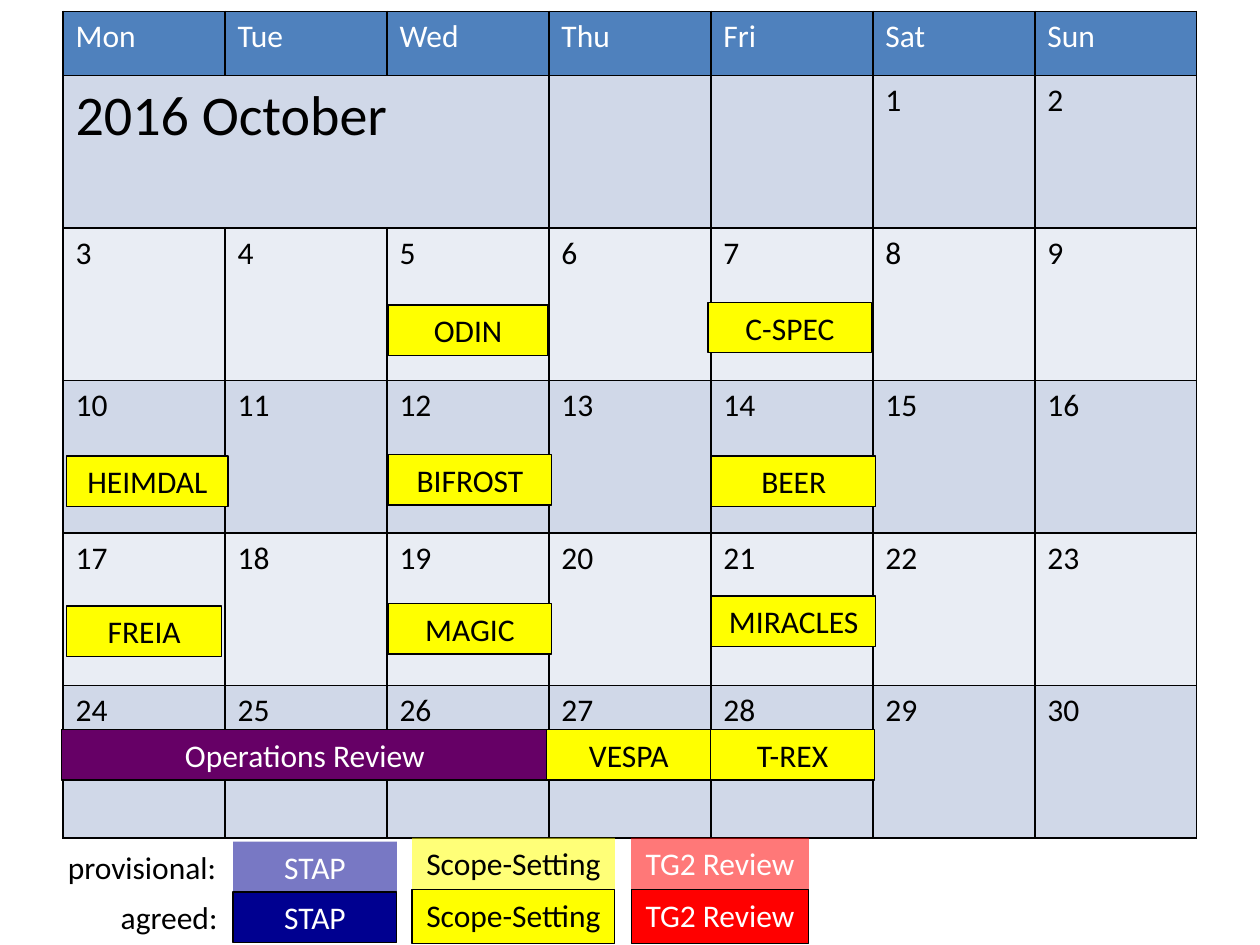
from dataclasses import dataclass
from typing import Optional

from lxml import etree
from pptx import Presentation
from pptx import util as u
from pptx.dml.color import RGBColor
from pptx.enum import shapes, text
from pptx.oxml import ns


@dataclass(frozen=True)
class Theme:
    font: str = "Calibri"
    body: int = 18
    title: int = 32
    black: str = "000000"
    white: str = "FFFFFF"
    header: str = "4F81BD"
    band_dark: str = "D0D8E8"
    band_light: str = "E9EDF4"
    yellow: str = "FFFF00"
    purple: str = "660066"
    navy: str = "000090"
    red: str = "FF0000"
    cell_border: float = 1
    box_border: float = 0.75
    provisional_alpha: int = 53


THEME = Theme()
WEEKDAYS = ("Mon", "Tue", "Wed", "Thu", "Fri", "Sat", "Sun")
WEEKS = 5
FIRST_DAY_COLUMN = 5
LAST_DAY = 30


@dataclass(frozen=True)
class Box:
    label: str
    left: float
    top: float
    width: float = 1.3
    height: float = 0.4
    fill: Optional[str] = THEME.yellow
    color: str = THEME.black
    provisional: bool = False


@dataclass(frozen=True)
class Category:
    label: str
    left: float
    top: float
    agreed_top: float
    width: float
    height: float
    fill: str
    color: str


EVENTS = (
    Box("HEIMDAL", 0.53, 3.62, 1.28),
    Box("ODIN", 3.08, 2.42, 1.27),
    Box("C-SPEC", 5.62, 2.4),
    Box("BIFROST", 3.08, 3.61),
    Box("BEER", 5.65, 3.62),
    Box("MIRACLES", 5.65, 4.73),
    Box("Operations Review", 0.49, 5.79, 3.86, fill=THEME.purple, color=THEME.white),
    Box("T-REX", 5.64, 5.79),
    Box("FREIA", 0.53, 4.81, 1.23),
    Box("MAGIC", 3.08, 4.79),
    Box("VESPA", 4.34, 5.79),
)
CATEGORIES = (
    Category("STAP", 1.85, 6.68, 7.08, 1.3, 0.4, THEME.navy, THEME.white),
    Category("Scope-Setting", 3.27, 6.65, 7.06, 1.61, 0.43, THEME.yellow, THEME.black),
    Category("TG2 Review", 5.01, 6.65, 7.06, 1.41, 0.43, THEME.red, THEME.white),
)
LEGEND_LABELS = (
    Box("provisional:", 0.44, 6.68, 1.4, fill=None),
    Box("agreed:", 0.86, 7.08, 0.98, fill=None),
)


def write(frame, content: str, *, size: int = THEME.body, color: str = THEME.black,
          align=text.PP_ALIGN.LEFT) -> None:
    paragraph = frame.paragraphs[0]
    paragraph.alignment = align
    run = paragraph.add_run()
    run.text = content
    run.font.name = THEME.font
    run.font.size = u.Pt(size)
    run.font.color.rgb = RGBColor.from_string(color)


def style_cell(cell, fill: str) -> None:
    properties = cell._tc.get_or_add_tcPr()
    for side in ("lnL", "lnR", "lnT", "lnB"):
        line = etree.SubElement(properties, ns.qn(f"a:{side}"), w=str(u.Pt(THEME.cell_border)))
        solid = etree.SubElement(line, ns.qn("a:solidFill"))
        etree.SubElement(solid, ns.qn("a:srgbClr"), val=THEME.black)
    cell.fill.solid()
    cell.fill.fore_color.rgb = RGBColor.from_string(fill)


def draw_calendar(slide) -> None:
    columns = len(WEEKDAYS)
    table = slide.shapes.add_table(WEEKS + 1, columns, u.Inches(0.5), u.Inches(0.09),
                                   u.Inches(9), u.Inches(6.55)).table
    for index, row in enumerate(table.rows):
        row.height = u.Inches(1.21 if index else 0.51)
        band = (THEME.band_dark if index % 2 else THEME.band_light) if index else THEME.header
        for cell in row.cells:
            style_cell(cell, band)
    for column, weekday in enumerate(WEEKDAYS):
        write(table.cell(0, column).text_frame, weekday, color=THEME.white)
    table.cell(1, 0).merge(table.cell(1, 2))
    write(table.cell(1, 0).text_frame, "2016 October", size=THEME.title)
    for day in range(1, LAST_DAY + 1):
        week, column = divmod(FIRST_DAY_COLUMN + day - 1, columns)
        write(table.cell(week + 1, column).text_frame, str(day))


def draw_box(slide, box: Box) -> None:
    place = [u.Inches(length) for length in (box.left, box.top, box.width, box.height)]
    if box.fill is None:
        shape = slide.shapes.add_textbox(*place)
    else:
        shape = slide.shapes.add_shape(shapes.MSO_SHAPE.RECTANGLE, *place)
        shape.shadow.inherit = False
        shape.fill.solid()
        shape.fill.fore_color.rgb = RGBColor.from_string(box.fill)
        if box.provisional:
            shape.line.fill.background()
            color = shape._element.spPr.find(".//" + ns.qn("a:srgbClr"))
            etree.SubElement(color, ns.qn("a:alpha"), val=str(THEME.provisional_alpha * 1000))
        else:
            shape.line.color.rgb = RGBColor.from_string(THEME.black)
            shape.line.width = u.Pt(THEME.box_border)
    frame = shape.text_frame
    frame.word_wrap = box.fill is not None
    frame.auto_size = text.MSO_AUTO_SIZE.SHAPE_TO_FIT_TEXT
    frame.vertical_anchor = text.MSO_ANCHOR.TOP
    align = text.PP_ALIGN.LEFT if box.fill is None else text.PP_ALIGN.CENTER
    write(frame, box.label, color=box.color, align=align)


def draw_category(slide, category: Category) -> None:
    for top, provisional in ((category.top, True), (category.agreed_top, False)):
        draw_box(slide, Box(category.label, category.left, top, category.width,
                            category.height, category.fill, category.color, provisional))


def main() -> None:
    """Build the October 2016 review calendar."""
    presentation = Presentation()
    presentation.slide_width = u.Inches(10)
    presentation.slide_height = u.Inches(7.5)
    slide = presentation.slides.add_slide(presentation.slide_layouts[6])
    draw_calendar(slide)
    for category in CATEGORIES:
        draw_category(slide, category)
    for box in LEGEND_LABELS + EVENTS:
        draw_box(slide, box)
    presentation.save("out.pptx")


if __name__ == "__main__":
    main()
